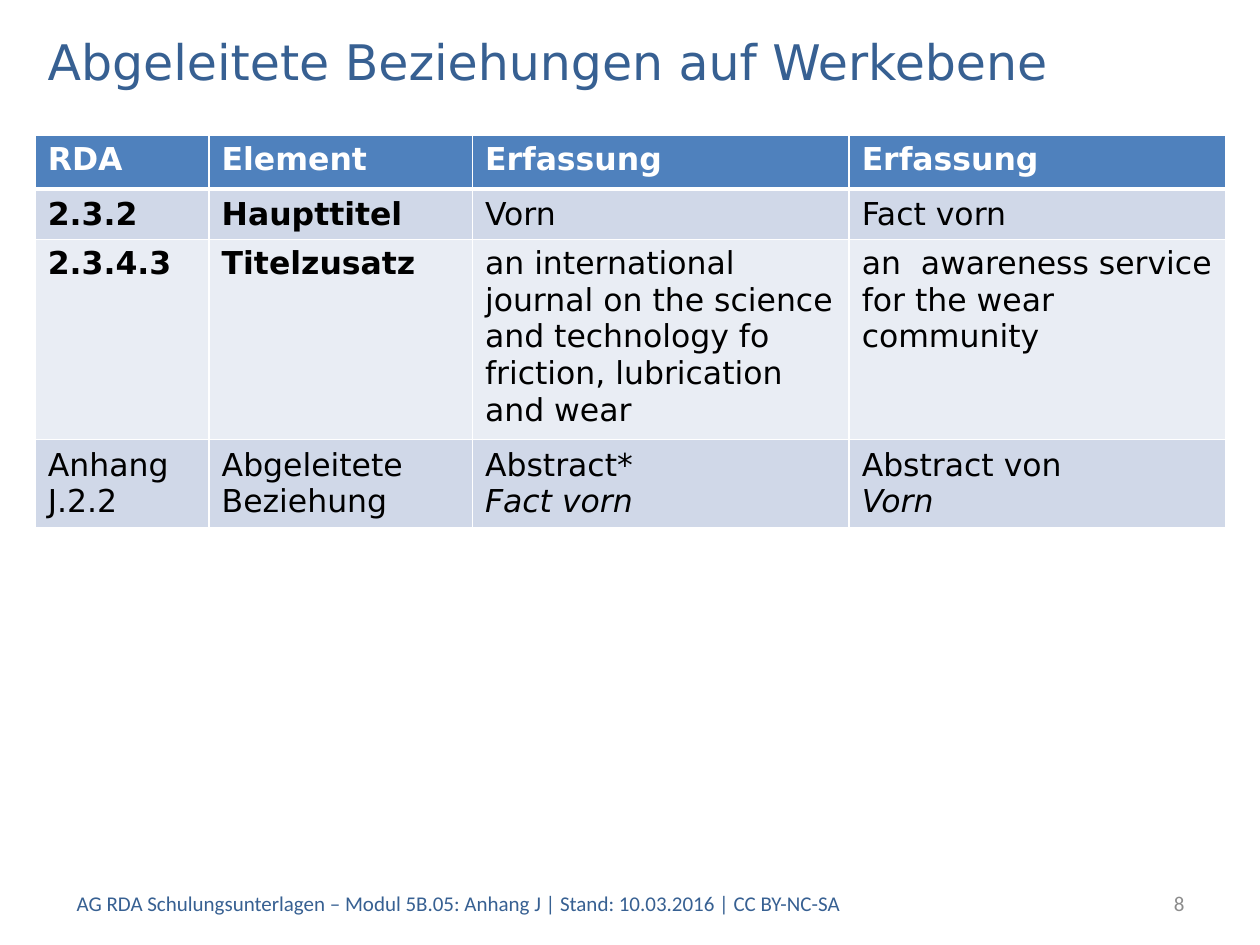
from dataclasses import dataclass

from lxml import etree
from pptx import Presentation
from pptx.dml.color import RGBColor
from pptx.enum import text as t
from pptx.oxml import ns
from pptx.util import Inches, Pt

NAVY = RGBColor(0x37, 0x60, 0x92)
GREY = RGBColor(0x8C, 0x8C, 0x8C)
BLUE = RGBColor(0x4F, 0x81, 0xBD)
PALE = RGBColor(0xD0, 0xD8, 0xE8)
LIGHT = RGBColor(0xE9, 0xED, 0xF4)
WHITE = RGBColor(0xFF, 0xFF, 0xFF)
BLACK = RGBColor(0x00, 0x00, 0x00)
SANS = "DejaVu Sans"
MID = t.MSO_ANCHOR.MIDDLE
TOP = t.MSO_ANCHOR.TOP


@dataclass
class Label:
    text: str
    box: tuple[float, float, float, float]
    size: int
    face: str
    color: RGBColor
    align: t.PP_ALIGN = t.PP_ALIGN.LEFT


@dataclass
class Row:
    cells: tuple[str, ...]
    height: float
    fill: RGBColor
    color: RGBColor = BLACK
    anchor: t.MSO_ANCHOR = MID
    bold: int = 0
    slant: tuple[int, ...] = ()


LABELS = [
    Label("AG RDA Schulungsunterlagen – Modul 5B.05: Anhang J | "
          "Stand: 10.03.2016 | CC BY-NC-SA",
          (0.51, 6.97, 6.69, 0.4), 12, "Calibri", NAVY),
    Label("8", (7.91, 6.97, 1.59, 0.4), 12, "Calibri", GREY, t.PP_ALIGN.RIGHT),
    Label("Abgeleitete Beziehungen auf Werkebene",
          (0.28, 0.2, 9.45, 0.56), 28, SANS, NAVY),
]
WIDTHS = (1.38, 2.09, 2.99, 2.99)
ROWS = [
    Row(("RDA", "Element", "Erfassung", "Erfassung"),
        0.43, BLUE, WHITE, TOP, bold=4),
    Row(("2.3.2", "Haupttitel", "Vorn", "Fact vorn"), 0.4, PALE, bold=2),
    Row(("2.3.4.3", "Titelzusatz",
         "an international journal on the science and technology fo "
         "friction, lubrication and wear",
         "an  awareness service for the wear community"),
        1.59, LIGHT, anchor=TOP, bold=2),
    Row(("Anhang\nJ.2.2", "Abgeleitete\nBeziehung",
         "Abstract*\nFact vorn", "Abstract von \nVorn"),
        0.7, PALE, slant=(2, 3)),
]


def style(run, size: int, face: str, color: RGBColor) -> None:
    run.font.size = Pt(size)
    run.font.name = face
    run.font.color.rgb = color


def add_label(slide, label: Label) -> None:
    box = slide.shapes.add_textbox(*map(Inches, label.box))
    frame = box.text_frame
    frame.word_wrap = True
    frame.vertical_anchor = MID
    frame.text = label.text
    para = frame.paragraphs[0]
    para.alignment = label.align
    style(para.runs[0], label.size, label.face, label.color)


def add_edge(cell, side: str, width: float) -> None:
    props = cell._tc.get_or_add_tcPr()
    line = etree.SubElement(props, ns.qn(f"a:ln{side}"), w=str(Pt(width)))
    fill = etree.SubElement(line, ns.qn("a:solidFill"))
    etree.SubElement(fill, ns.qn("a:srgbClr"), val=str(WHITE))


def fill_cell(cell, row: Row, col: int, top: int, base: int) -> None:
    for side, width in zip("LRTB", (1, 1, top, base)):
        add_edge(cell, side, width)
    cell.fill.solid()
    cell.fill.fore_color.rgb = row.fill
    cell.vertical_anchor = row.anchor
    para = cell.text_frame.paragraphs[0]
    para.text = row.cells[col]
    for run in para.runs:
        style(run, 18, SANS, row.color)
        run.font.bold = col < row.bold
    if col in row.slant:
        para.runs[-1].font.italic = True


def add_grid(slide, rows: list[Row], left: float, top: float) -> None:
    high = sum(row.height for row in rows)
    frame = slide.shapes.add_table(
        len(rows), len(WIDTHS), Inches(left), Inches(top),
        Inches(sum(WIDTHS)), Inches(high))
    table = frame.table
    for col, width in zip(table.columns, WIDTHS):
        col.width = Inches(width)
    for i, row in enumerate(rows):
        table.rows[i].height = Inches(row.height)
        for j in range(len(WIDTHS)):
            fill_cell(table.cell(i, j), row, j,
                      3 if i == 1 else 1, 3 if i == 0 else 1)


def main() -> None:
    deck = Presentation()
    deck.slide_width = Inches(10)
    deck.slide_height = Inches(7.5)
    slide = deck.slides.add_slide(deck.slide_layouts[6])
    add_grid(slide, ROWS, 0.28, 1.07)
    for label in LABELS:
        add_label(slide, label)
    deck.save("out.pptx")


if __name__ == "__main__":
    main()
